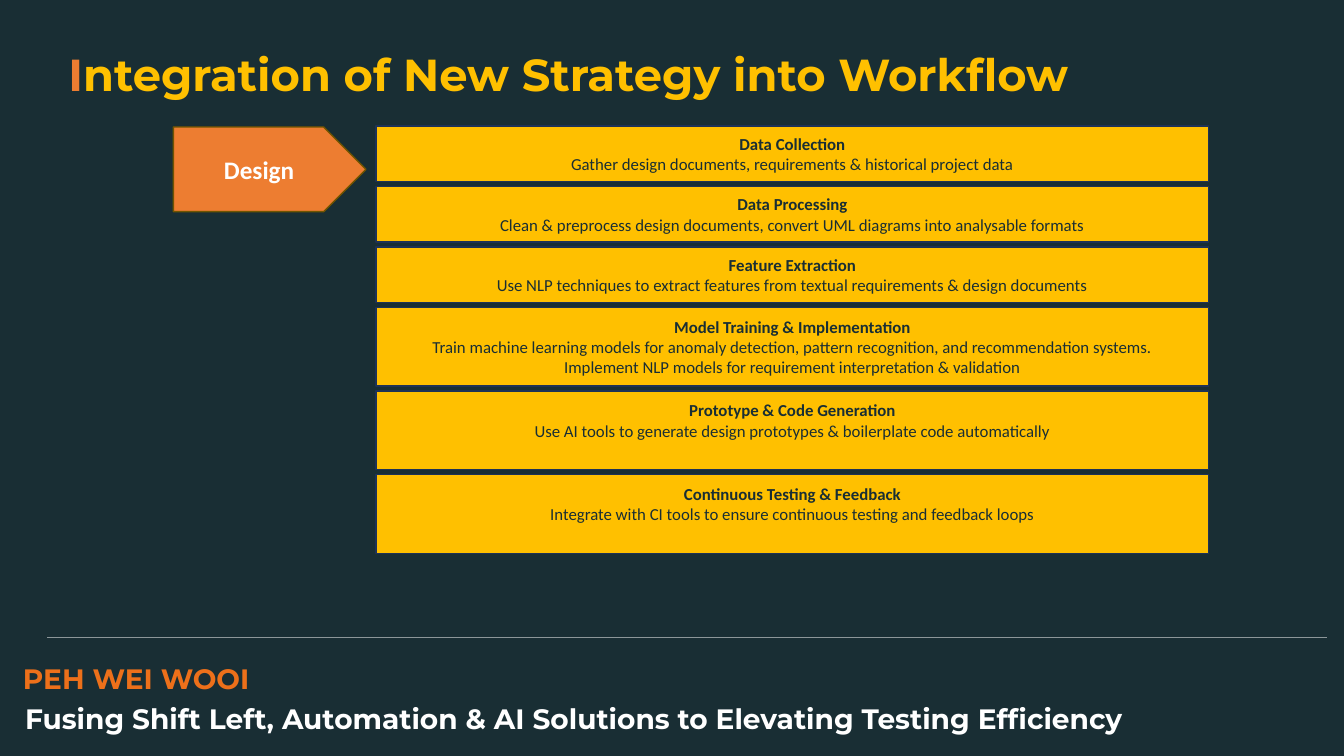
from lxml import etree
from pptx import Presentation
from pptx import util as u
from pptx.dml.color import RGBColor
from pptx.enum import shapes, text
from pptx.oxml.ns import qn

NAVY, GOLD, ORANGE, WHITE = "192E34", "FFC000", "ED7D31", "FFFFFF"
STEP_GAP = 0.05
LINE_HEIGHT = 0.2
STEPS = [  # heading, details, lines the box has room for
    ("Data Collection",
     ["Gather design documents, requirements & historical project data"], 2),
    ("Data Processing",
     ["Clean & preprocess design documents, convert UML diagrams into analysable formats"], 2),
    ("Feature Extraction",
     ["Use NLP techniques to extract features from textual requirements & design documents"], 2),
    ("Model Training & Implementation",
     ["Train machine learning models for anomaly detection, pattern recognition, "
      "and recommendation systems.",
      "Implement NLP models for requirement interpretation & validation"], 3),
    ("Prototype & Code Generation",
     ["Use AI tools to generate design prototypes & boilerplate code automatically"], 3),
    ("Continuous Testing & Feedback",
     ["Integrate with CI tools to ensure continuous testing and feedback loops"], 3),
]
STEP_HEIGHTS = {2: 0.55, 3: 0.78}


def color(value):
    return RGBColor.from_string(value)


def add_span(para, words, value, **formats):
    span = para.add_run()
    span.text = words
    span.font.color.rgb = color(value)
    for name, setting in formats.items():
        setattr(span.font, name, setting)


def add_text_line(page, box, spans, size, spacing=None):
    frame = page.shapes.add_textbox(*map(u.Inches, box)).text_frame
    frame.word_wrap = True
    para = frame.paragraphs[0]
    para.line_spacing = spacing
    for words, value in spans:
        add_span(para, words, value, name="Montserrat", size=u.Pt(size), bold=True)


def add_block(page, kind, box, fill, line, lines, size):
    """Filled shape with centred lines, the first one bold."""
    shape = page.shapes.add_shape(kind, *map(u.Inches, box))
    shape.shadow.inherit = False
    shape.fill.solid()
    shape.fill.fore_color.rgb = color(fill)
    shape.line.color.rgb = color(line)
    shape.line.width = u.Pt(1)
    frame = shape.text_frame
    frame.word_wrap = True
    frame.vertical_anchor = text.MSO_ANCHOR.MIDDLE
    for index, (words, value) in enumerate(lines):
        para = frame.add_paragraph() if index else frame.paragraphs[0]
        para.alignment = text.PP_ALIGN.CENTER
        add_span(para, words, value, name="Calibri", size=u.Pt(size), bold=index == 0)
    return frame


def add_steps(page, left, top, width):
    for heading, details, room in STEPS:
        height = STEP_HEIGHTS[room]
        lines = [(words, NAVY) for words in [heading, *details]]
        frame = add_block(page, shapes.MSO_SHAPE.RECTANGLE, (left, top, width, height),
                          GOLD, "1E3256", lines, 12)
        # Unused lines stay free at the bottom
        frame.margin_bottom = u.Inches(0.05 + LINE_HEIGHT * (room - len(lines)))
        top += height + STEP_GAP


def add_workflow(page, left, top):
    add_block(page, shapes.MSO_SHAPE.PENTAGON, (left, top + 0.01, 1.91, 0.84),
              ORANGE, "705400", [("Design", WHITE)], 18)
    add_steps(page, left + 2.01, top, 8.26)


def add_footer(page, left, top):
    rule = page.shapes.add_connector(
        shapes.MSO_CONNECTOR.STRAIGHT, u.Inches(left + 0.34), u.Inches(top),
        u.Inches(left + 13.03), u.Inches(top))
    rule.line.color.rgb = color("8C9699")
    rule.line.width = u.Pt(0.5)
    etree.SubElement(rule._element.spPr, qn("a:effectLst"))
    add_text_line(page, (left, top + 0.23, 4.76, 0.35),
                  [("PEH WEI WOOI", "ED701A")], 20, 0.9)
    add_text_line(page, (left + 0.02, top + 0.63, 11.34, 0.24),
                  [("Fusing Shift Left, Automation & AI Solutions to Elevating "
                    "Testing Efficiency", WHITE)], 20, 0.9)


def main():
    deck = Presentation()
    deck.slide_width, deck.slide_height = u.Inches(13.33), u.Inches(7.5)
    page = deck.slides.add_slide(deck.slide_layouts[6])
    page.background.fill.solid()
    page.background.fill.fore_color.rgb = color(NAVY)

    # Title
    add_text_line(page, (0.58, 0.41, 10.76, 0.64),
                  [("I", ORANGE), ("ntegration of New Strategy into Workflow", GOLD)], 32)
    # Phase arrow and its steps
    add_workflow(page, 1.72, 1.25)
    # Footer rule, author and topic
    add_footer(page, 0.13, 6.32)

    deck.save("out.pptx")


if __name__ == "__main__":
    main()
